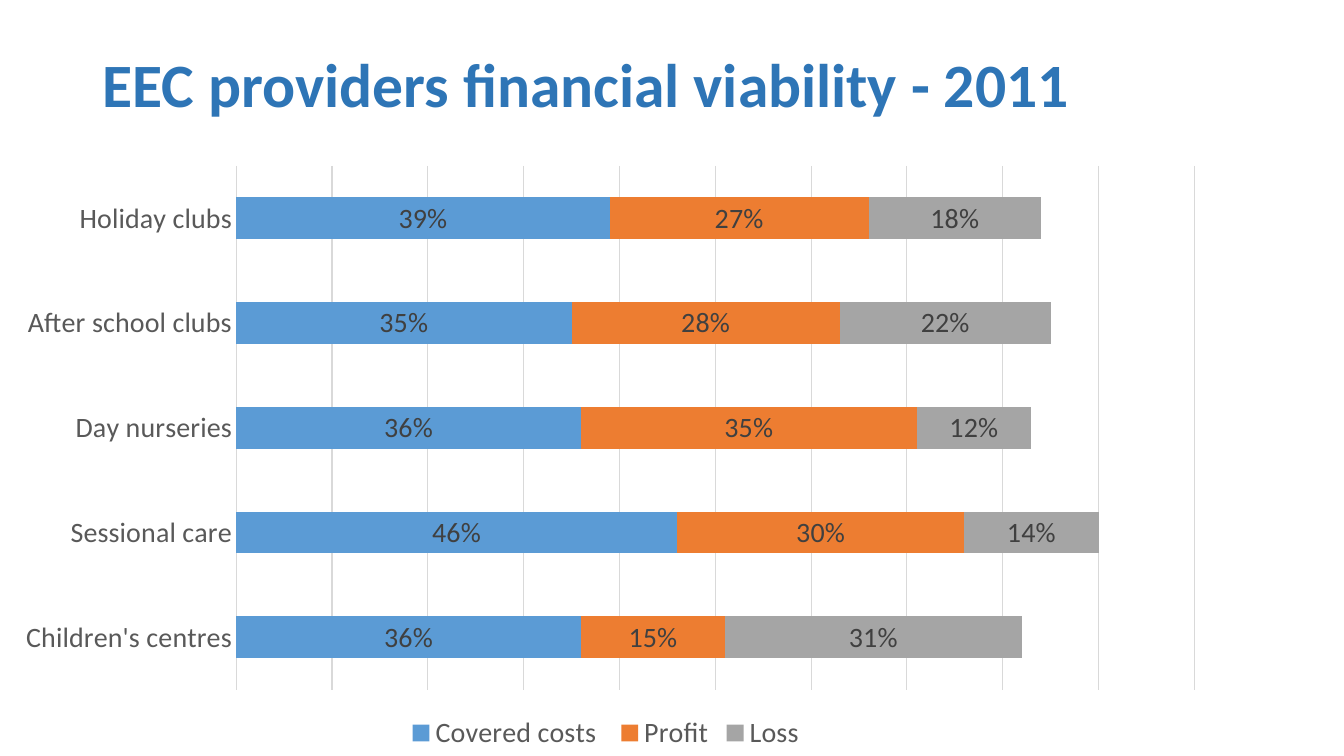
import lxml.etree
import pptx
import pptx.chart.data
import pptx.dml.color
import pptx.enum.chart
import pptx.enum.text
import pptx.oxml
import pptx.oxml.ns
import pptx.util
from pptx.util import Cm

TITLE = "EEC providers financial viability - 2011"
GROUPS = ["Children's centres", "Sessional care", "Day nurseries",
          "After school clubs", "Holiday clubs"]
SERIES = [
    ("Covered costs ", (0.36, 0.46, 0.36, 0.35, 0.39), "5B9BD5"),
    ("Profit", (0.15, 0.30, 0.35, 0.28, 0.27), "ED7D31"),
    ("Loss", (0.31, 0.14, 0.12, 0.22, 0.18), "A5A5A5"),
]
THEME = {
    "font": "Calibri",
    "title": ("2E75B6", 44),
    "axis": ("595959", 20),
    "label": ("404040", 20),
    "grid": ("D9D9D9", 0.75),
}
PLOT = {"x": 0.195, "y": 0.081, "w": 0.791, "h": 0.816}


def set_font(font, role):
    color, size = THEME[role]
    font.name = THEME["font"]
    font.size = pptx.util.Pt(size)
    font.color.rgb = pptx.dml.color.RGBColor.from_string(color)


def set_line(line):
    color, width = THEME["grid"]
    line.color.rgb = pptx.dml.color.RGBColor.from_string(color)
    line.width = pptx.util.Pt(width)


def place_plot(chart):
    """Fix the inner plot area as fractions of the chart frame."""
    area = chart._chartSpace.chart.plotArea
    for old in area.findall(pptx.oxml.ns.qn("c:layout")):
        area.remove(old)
    tag = pptx.oxml.ns.qn
    layout = lxml.etree.Element(tag("c:layout"))
    manual = lxml.etree.SubElement(layout, tag("c:manualLayout"))
    rules = [("layoutTarget", "inner"), ("xMode", "edge"), ("yMode", "edge")]
    for name, value in rules + list(PLOT.items()):
        lxml.etree.SubElement(manual, tag("c:" + name)).set("val", str(value))
    area.insert(0, layout)


def add_title(slide):
    title = slide.shapes.title
    title.left, title.top = Cm(2.33), Cm(0.71)
    title.width, title.height = Cm(29.21), Cm(3)
    frame = title.text_frame
    frame.text = TITLE
    frame.word_wrap = True
    frame.auto_size = pptx.enum.text.MSO_AUTO_SIZE.NONE
    frame.vertical_anchor = pptx.enum.text.MSO_ANCHOR.MIDDLE
    line = frame.paragraphs[0]
    line.alignment = pptx.enum.text.PP_ALIGN.LEFT
    line.line_spacing = 0.9
    set_font(line.runs[0].font, "title")
    line.runs[0].font.bold = True


def add_bars(slide):
    data = pptx.chart.data.CategoryChartData(number_format="0%")
    data.categories = GROUPS
    for name, values, _ in SERIES:
        data.add_series(name, values)
    enum = pptx.enum.chart
    chart = slide.shapes.add_chart(
        enum.XL_CHART_TYPE.BAR_STACKED,
        Cm(0), Cm(2.87), Cm(30.53), Cm(16.18), data).chart
    set_font(chart.font, "axis")
    chart.has_title = False
    place_plot(chart)

    plot = chart.plots[0]
    plot.gap_width, plot.overlap = 150, 100
    plot.vary_by_categories = False
    for series, (_, _, color) in zip(plot.series, SERIES):
        fill = series.format.fill
        fill.solid()
        fill.fore_color.rgb = pptx.dml.color.RGBColor.from_string(color)
        labels = series.data_labels
        labels.show_value = True
        labels.number_format = "0%"
        labels.number_format_is_linked = False
        labels.position = enum.XL_LABEL_POSITION.CENTER
        set_font(labels.font, "label")

    groups = chart.category_axis
    groups.major_tick_mark = enum.XL_TICK_MARK.NONE
    groups.minor_tick_mark = enum.XL_TICK_MARK.NONE
    set_font(groups.tick_labels.font, "axis")
    set_line(groups.format.line)

    scale = chart.value_axis
    scale.visible = False
    scale.minimum_scale, scale.maximum_scale = 0, 1
    scale.major_unit = 0.1
    scale.has_major_gridlines = True
    set_line(scale.major_gridlines.format.line)

    chart.has_legend = True
    chart.legend.position = enum.XL_LEGEND_POSITION.BOTTOM
    chart.legend.include_in_layout = False
    set_font(chart.legend.font, "axis")


def main():
    deck = pptx.Presentation()
    deck.slide_width, deck.slide_height = Cm(33.87), Cm(19.05)
    slide = deck.slides.add_slide(deck.slide_layouts[5])
    add_title(slide)
    add_bars(slide)
    deck.save("out.pptx")


if __name__ == "__main__":
    main()
